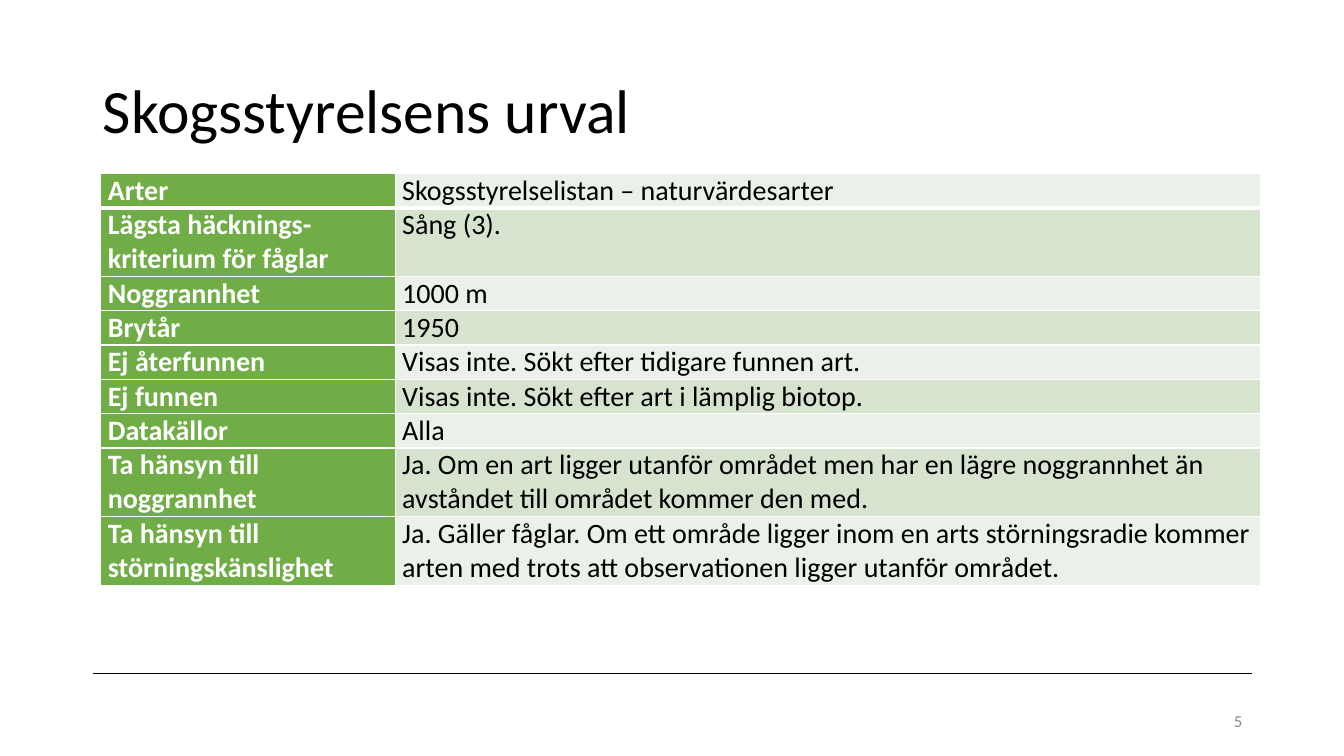
"""Build the slide that lists the selection rules of Skogsstyrelsen."""
from lxml.etree import SubElement
from pptx import Presentation
from pptx.dml.color import RGBColor
from pptx.enum.shapes import MSO_CONNECTOR as Connector
from pptx.enum.text import MSO_ANCHOR as Anchor, MSO_AUTO_SIZE as AutoSize, PP_ALIGN as Align
from pptx.oxml.ns import qn
from pptx.util import Inches, Pt

TITLE = "Skogsstyrelsens urval"
PAGE_NUMBER = "5"
RULES = [
    ("Arter", "Skogsstyrelselistan – naturvärdesarter", 1),
    ("Lägsta häcknings-kriterium för fåglar", "Sång (3).", 2),
    ("Noggrannhet", "1000 m", 1),
    ("Brytår", "1950", 1),
    ("Ej återfunnen", "Visas inte. Sökt efter tidigare funnen art.", 1),
    ("Ej funnen", "Visas inte. Sökt efter art i lämplig biotop.", 1),
    ("Datakällor", "Alla", 1),
    ("Ta hänsyn till noggrannhet",
     "Ja. Om en art ligger utanför området men har en lägre noggrannhet än "
     "avståndet till området kommer den med.", 2),
    ("Ta hänsyn till störningskänslighet",
     "Ja. Gäller fåglar. Om ett område ligger inom en arts störningsradie kommer "
     "arten med trots att observationen ligger utanför området.", 2),
]
COLORS = {"text": "000000", "white": "FFFFFF", "label": "70AD47",
          "light": "EBF1E9", "dark": "D5E3CF", "number": "8C8C8C"}
FONT = "Calibri"
COLUMN_WIDTHS = (2.92, 8.58)
LINE_HEIGHT = 0.34


def rgb(name):
    return RGBColor.from_string(COLORS[name])


def style(para, size, color, bold=False, align=Align.LEFT):
    para.alignment = align
    para.font.name = FONT
    para.font.size = Pt(size)
    para.font.bold = bold
    para.font.color.rgb = rgb(color)


def add_borders(cell, widths):
    properties = cell._tc.get_or_add_tcPr()
    for side, width in zip("LRTB", widths):
        border = SubElement(properties, qn(f"a:ln{side}"), w=str(Pt(width)))
        fill = SubElement(border, qn("a:solidFill"))
        SubElement(fill, qn("a:srgbClr"), val=COLORS["white"])


def fill_cell(cell, text, color, fill, bold, widths):
    add_borders(cell, widths)
    cell.fill.solid()
    cell.fill.fore_color.rgb = rgb(fill)
    cell.margin_left = cell.margin_right = Inches(0.07)
    cell.margin_top = cell.margin_bottom = 0
    cell.text = text
    style(cell.text_frame.paragraphs[0], 20, color, bold)


def add_title(page):
    title = page.shapes.title
    title.left, title.top = Inches(0.92), Inches(0.4)
    title.width, title.height = Inches(11.5), Inches(1.45)
    frame = title.text_frame
    frame.text = TITLE
    frame.auto_size = AutoSize.NONE
    frame.vertical_anchor = Anchor.MIDDLE
    para = frame.paragraphs[0]
    para.line_spacing = 0.9
    style(para, 44, "text")


def add_rules(page):
    height = LINE_HEIGHT * sum(lines for _, _, lines in RULES)
    table = page.shapes.add_table(len(RULES), 2, Inches(1), Inches(1.72),
                                  Inches(sum(COLUMN_WIDTHS)), Inches(height)).table
    for column, width in zip(table.columns, COLUMN_WIDTHS):
        column.width = Inches(width)
    for index, (label, value, lines) in enumerate(RULES):
        table.rows[index].height = Inches(LINE_HEIGHT * lines)
        widths = (1, 1, 3 if index == 1 else 1, 3 if index == 0 else 1)
        band = "dark" if index % 2 else "light"
        fill_cell(table.cell(index, 0), label, "white", "label", True, widths)
        fill_cell(table.cell(index, 1), value, "text", band, False, widths)


def add_footer(page):
    line = page.shapes.add_connector(Connector.STRAIGHT, Inches(0.92), Inches(6.68),
                                     Inches(12.42), Inches(6.68))
    line.line.color.rgb = rgb("text")
    line.line.width = Pt(0.5)
    SubElement(line._element.spPr, qn("a:effectLst"))
    box = page.shapes.add_textbox(Inches(9.42), Inches(6.95), Inches(3), Inches(0.4))
    frame = box.text_frame
    frame.word_wrap = True
    frame.vertical_anchor = Anchor.MIDDLE
    frame.text = PAGE_NUMBER
    style(frame.paragraphs[0], 12, "number", align=Align.RIGHT)


def main():
    deck = Presentation()
    deck.slide_width, deck.slide_height = Inches(13.33), Inches(7.5)
    page = deck.slides.add_slide(deck.slide_layouts[5])
    add_title(page)
    add_rules(page)
    add_footer(page)
    deck.save("out.pptx")


if __name__ == "__main__":
    main()
